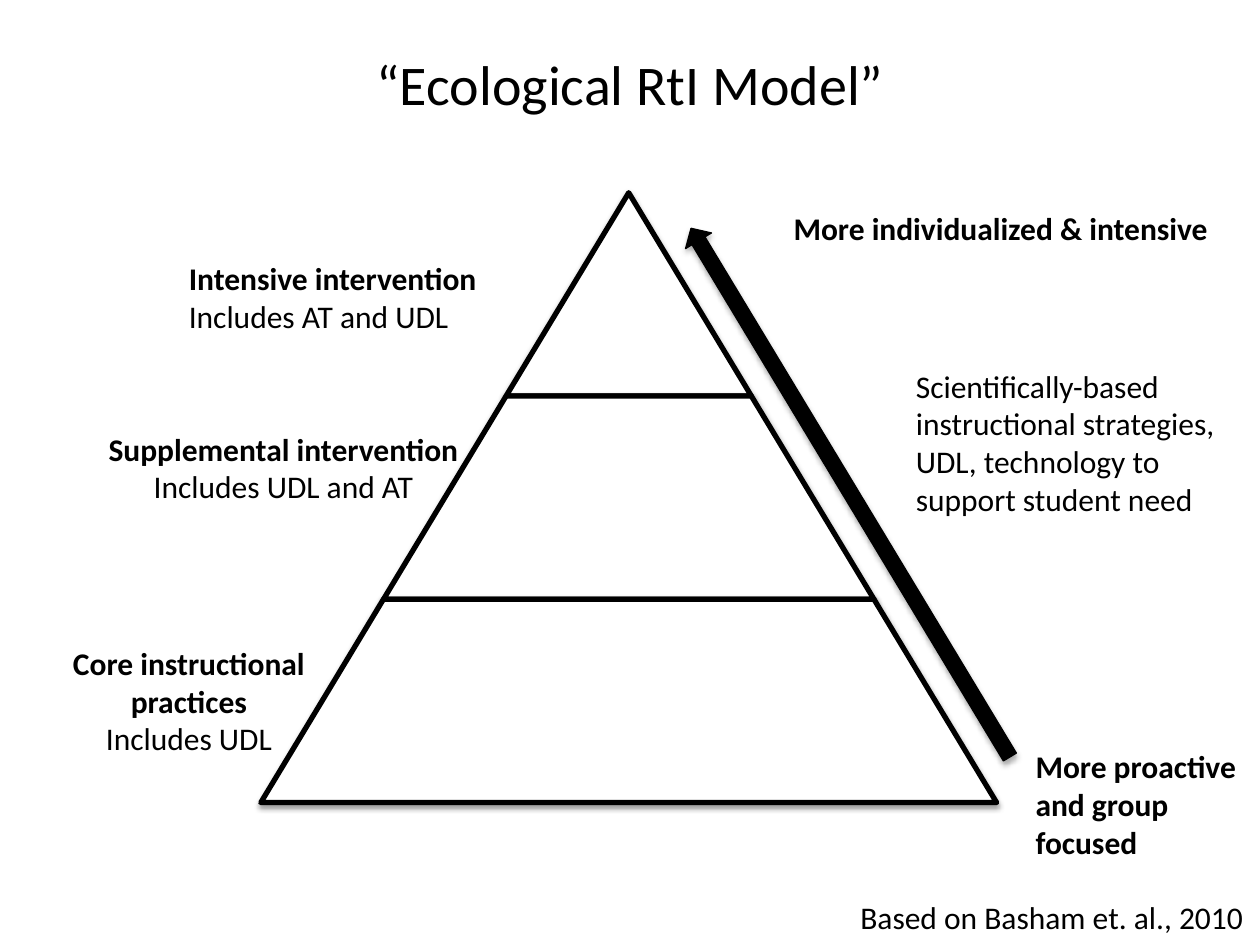
from dataclasses import dataclass

from lxml import etree
from pptx import Presentation
from pptx.dml.color import RGBColor
from pptx.enum import shapes, text
from pptx.oxml import ns
from pptx.util import Inches, Pt


@dataclass(frozen=True)
class Theme:
    ink: RGBColor = RGBColor(0, 0, 0)
    paper: RGBColor = RGBColor(255, 255, 255)
    font: str = "Calibri"
    title_size: int = 32
    body_size: int = 18


THEME = Theme()
LEFT, CENTER = text.PP_ALIGN.LEFT, text.PP_ALIGN.CENTER


def add_shadow(shape, opacity, distance):
    """Give the shape a soft black shadow that falls straight down."""
    shape.shadow.inherit = False
    effects = shape._element.spPr.find(ns.qn("a:effectLst"))
    shadow = etree.SubElement(
        effects, ns.qn("a:outerShdw"), blurRad=str(Pt(3.15)),
        dist=str(Pt(distance)), dir="5400000", rotWithShape="0")
    color = etree.SubElement(shadow, ns.qn("a:srgbClr"), val=str(THEME.ink))
    etree.SubElement(color, ns.qn("a:alpha"), val=str(opacity * 1000))


def style_shape(shape, fill, line_width):
    shape.fill.solid()
    shape.fill.fore_color.rgb = fill
    shape.line.color.rgb = THEME.ink
    shape.line.width = Pt(line_width)


def add_pyramid(slide, left, top, width, height, tiers=3):
    """Stack tiers whose widths grow evenly from the apex to the base."""
    tier_height = height / tiers
    inset = width / tiers / 2
    for tier in range(1, tiers + 1):
        shape = slide.shapes.add_shape(
            shapes.MSO_SHAPE.TRAPEZOID,
            Inches(left + (tiers - tier) * inset),
            Inches(top + (tier - 1) * tier_height),
            Inches(2 * inset * tier), Inches(tier_height))
        shape.adjustments[0] = inset / tier_height
        style_shape(shape, THEME.paper, 3)
        add_shadow(shape, opacity=38, distance=1.57)


def add_intensity_arrow(slide, left, top, width, height):
    arrow = slide.shapes.add_shape(
        shapes.MSO_SHAPE.RIGHT_ARROW,
        Inches(left), Inches(top), Inches(width), Inches(height))
    arrow.rotation = 238.9
    arrow.adjustments[1] = 0.48
    style_shape(arrow, THEME.ink, 0.75)
    add_shadow(arrow, opacity=35, distance=1.81)


def add_label(slide, box, heading="", detail="", align=LEFT, wrap=False,
              size=THEME.body_size):
    """Write a bold heading, a plain detail line, or one above the other."""
    frame = slide.shapes.add_textbox(*map(Inches, box)).text_frame
    frame.word_wrap = wrap
    frame.auto_size = text.MSO_AUTO_SIZE.SHAPE_TO_FIT_TEXT
    lines = [(words, bold) for words, bold in ((heading, True), (detail, False))
             if words]
    for index, (words, bold) in enumerate(lines):
        paragraph = frame.add_paragraph() if index else frame.paragraphs[0]
        paragraph.text = words
        paragraph.alignment = align
        paragraph.font.name = THEME.font
        paragraph.font.size = Pt(size)
        paragraph.font.bold = bold
        paragraph.font.color.rgb = THEME.ink


def add_tier_labels(slide):
    add_label(slide, (1.4, 2.01, 2.52, 0.71),
              "Intensive intervention", "Includes AT and UDL")
    add_label(slide, (0.74, 3.36, 3.02, 0.71),
              "Supplemental intervention", "Includes UDL and AT", CENTER)
    add_label(slide, (0, 5.06, 3, 1.01),
              "Core instructional practices", "Includes UDL", CENTER, wrap=True)


def add_arrow_labels(slide):
    add_label(slide, (6.2, 1.61, 3.53, 0.4), "More individualized & intensive")
    add_label(slide, (7.17, 2.86, 2.91, 1.31),
              detail="Scientifically-based instructional strategies, UDL, "
                     "technology to support student need", wrap=True)
    add_label(slide, (8.12, 5.88, 1.88, 1.01),
              "More proactive and group focused", wrap=True)


def main():
    presentation = Presentation()
    presentation.slide_width, presentation.slide_height = Inches(10), Inches(7.5)
    slide = presentation.slides.add_slide(presentation.slide_layouts[6])
    add_pyramid(slide, 2.07, 1.53, 5.84, 4.84)
    add_intensity_arrow(slide, 4.3, 3.79, 4.9, 0.24)
    add_arrow_labels(slide)
    add_tier_labels(slide)
    add_label(slide, (2.89, 0.34, 4.28, 0.64),
              detail="“Ecological RtI Model”", size=THEME.title_size)
    add_label(slide, (6.73, 7.08, 3.27, 0.4),
              detail="Based on Basham et. al., 2010")
    presentation.save("out.pptx")


if __name__ == "__main__":
    main()
